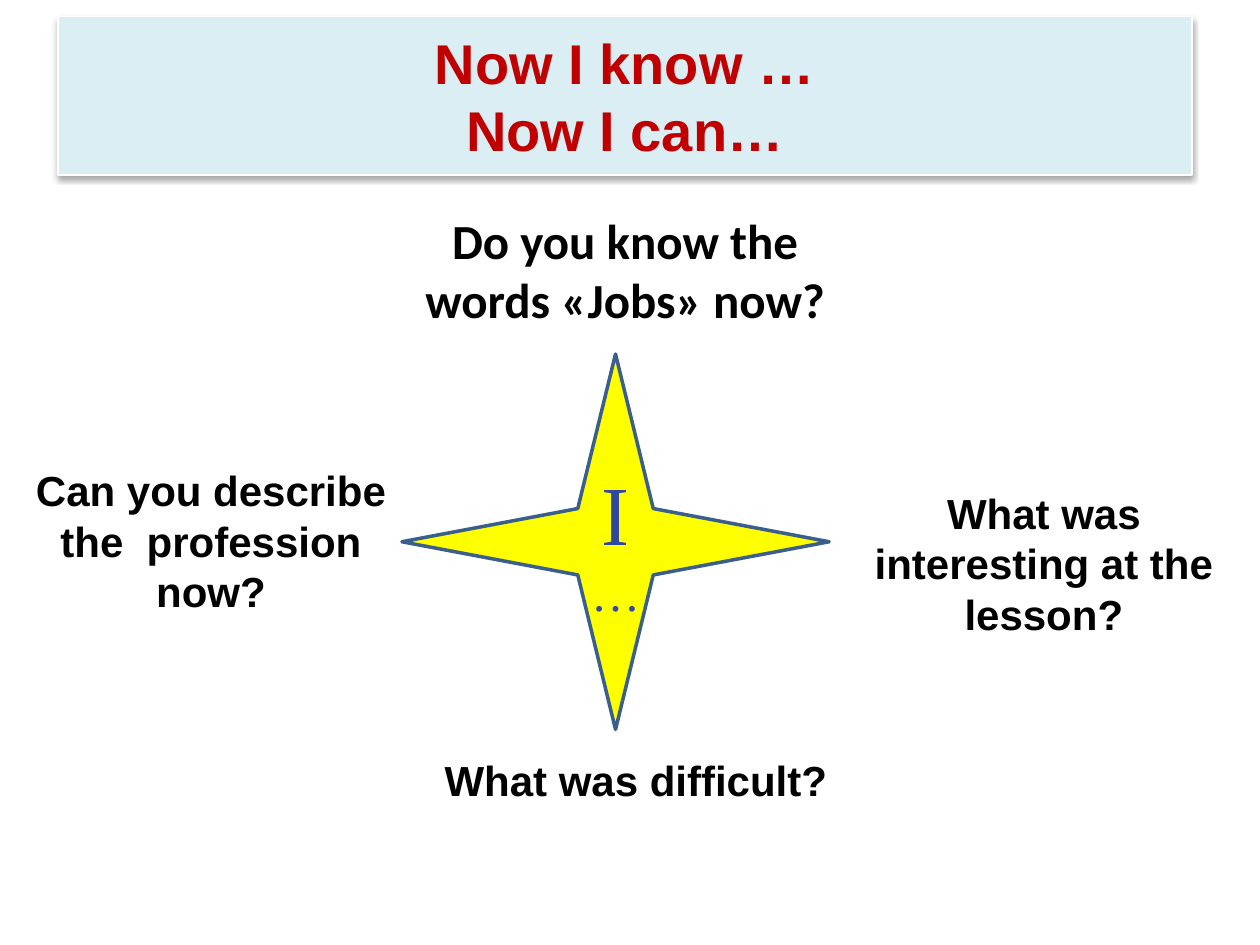
import pptx
import pptx.dml.color
import pptx.enum.shapes
import pptx.enum.text
import pptx.oxml
import pptx.util

PALE_BLUE = pptx.dml.color.RGBColor(0xDB, 0xEE, 0xF4)
WHITE = pptx.dml.color.RGBColor(0xFF, 0xFF, 0xFF)
RED = pptx.dml.color.RGBColor(0xC0, 0x00, 0x00)
BLACK = pptx.dml.color.RGBColor(0x00, 0x00, 0x00)
YELLOW = pptx.dml.color.RGBColor(0xFF, 0xFF, 0x00)
STEEL = pptx.dml.color.RGBColor(0x3A, 0x5F, 0x8C)
INDIGO = pptx.dml.color.RGBColor(0x31, 0x48, 0x9F)

CENTER = pptx.enum.text.PP_ALIGN.CENTER
LEFT = pptx.enum.text.PP_ALIGN.LEFT
MIDDLE = pptx.enum.text.MSO_ANCHOR.MIDDLE

SHADOW = (
    '<a:effectLst xmlns:a="http://schemas.openxmlformats.org/drawingml/2006/main">'
    '<a:outerShdw blurRad="40000" dist="23000" dir="5400000" rotWithShape="0">'
    '<a:srgbClr val="000000"><a:alpha val="35000"/></a:srgbClr>'
    '</a:outerShdw></a:effectLst>'
)


class ReflectionSlide:
    """Draws lesson-reflection elements on a grid of 100 columns by 75 rows."""

    def __init__(self, presentation):
        self.column = presentation.slide_width / 100
        self.row = presentation.slide_height / 75
        self.slide = presentation.slides.add_slide(presentation.slide_layouts[5])

    def box(self, left, top, width, height):
        return (round(left * self.column), round(top * self.row),
                round(width * self.column), round(height * self.row))

    def paint(self, shape, fill, line, line_width):
        shape.fill.solid()
        shape.fill.fore_color.rgb = fill
        shape.line.color.rgb = line
        shape.line.width = pptx.util.Pt(line_width)

    def style(self, paragraph, font_name, size, color, bold=True, alignment=CENTER):
        paragraph.alignment = alignment
        paragraph.font.name = font_name
        paragraph.font.size = pptx.util.Pt(size)
        paragraph.font.color.rgb = color
        paragraph.font.bold = bold

    def title(self, text, *place):
        shape = self.slide.shapes.title
        shape.left, shape.top, shape.width, shape.height = self.box(*place)
        self.paint(shape, PALE_BLUE, WHITE, 0.75)
        shape._element.spPr.append(pptx.oxml.parse_xml(SHADOW))
        frame = shape.text_frame
        frame.text = text
        frame.auto_size = pptx.enum.text.MSO_AUTO_SIZE.NONE
        frame.vertical_anchor = MIDDLE
        for paragraph in frame.paragraphs:
            self.style(paragraph, "Arial", 32, RED)

    def question(self, text, *place, font_name="Arial", size=24, alignment=CENTER):
        frame = self.slide.shapes.add_textbox(*self.box(*place)).text_frame
        frame.word_wrap = True
        frame.auto_size = pptx.enum.text.MSO_AUTO_SIZE.SHAPE_TO_FIT_TEXT
        frame.text = text
        self.style(frame.paragraphs[0], font_name, size, BLACK, alignment=alignment)

    def star(self, letter, ending, *place):
        shape = self.slide.shapes.add_shape(
            pptx.enum.shapes.MSO_SHAPE.STAR_4_POINT, *self.box(*place))
        shape.shadow.inherit = False
        self.paint(shape, YELLOW, STEEL, 2)
        shape.text_frame.vertical_anchor = MIDDLE
        paragraph = shape.text_frame.paragraphs[0]
        self.style(paragraph, "Times New Roman", 28, INDIGO, bold=False)
        for text, size in ((letter, 48), (ending, 28)):
            run = paragraph.add_run()
            run.text = text
            run.font.size = pptx.util.Pt(size)
            run.font.color.rgb = INDIGO


def main():
    presentation = pptx.Presentation()
    presentation.slide_width = pptx.util.Inches(10)
    presentation.slide_height = pptx.util.Inches(7.5)
    reflection = ReflectionSlide(presentation)
    reflection.title("Now I know …\nNow I can…", 4.6, 1.3, 90, 12.6)
    reflection.question("Can you describe the  profession now?", 1.6, 36.4, 30.3, 13.1)
    reflection.question("What was interesting at the lesson?", 67.3, 38.2, 31.1, 13.1)
    reflection.question("What was difficult?", 34.3, 59.4, 33.1, 5, alignment=LEFT)
    reflection.question("Do you know the words «Jobs» now?", 31.9, 16.2, 35.4, 10.4,
                        font_name="Calibri", size=28)
    reflection.star("I", "…", 31.9, 28.1, 33.9, 29.8)
    presentation.save("out.pptx")


if __name__ == "__main__":
    main()
